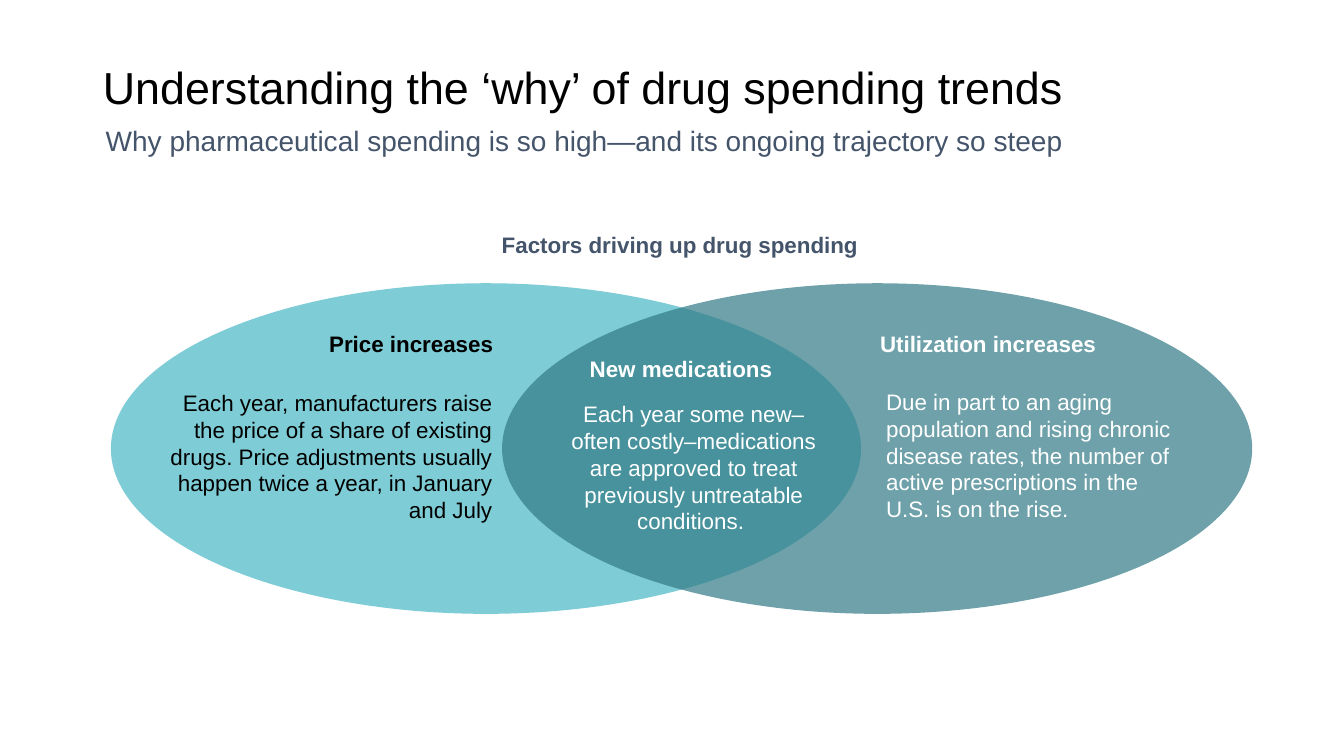
from lxml import etree
from pptx import Presentation
from pptx.dml.color import RGBColor
from pptx.enum.shapes import MSO_SHAPE
from pptx.enum.text import MSO_ANCHOR, MSO_AUTO_SIZE, PP_ALIGN
from pptx.oxml.ns import qn
from pptx.util import Inches, Pt

FONT = "Arial"
COLORS = {
    "black": "000000",
    "white": "FFFFFF",
    "slate": "44546A",
    "aqua": "48B7C4",
    "teal": "317A85",
}


def color(name):
    return RGBColor.from_string(COLORS[name])


def place(shape, left, top, width, height):
    shape.left, shape.top = Inches(left), Inches(top)
    shape.width, shape.height = Inches(width), Inches(height)


def write(paragraph, text, size, color_name, bold=False, align=PP_ALIGN.LEFT):
    paragraph.alignment = align
    run = paragraph.add_run()
    run.text = text
    run.font.name = FONT
    run.font.size = Pt(size)
    run.font.bold = bold
    run.font.color.rgb = color(color_name)


def add_title(slide, text):
    title = slide.shapes.title
    place(title, 0.92, 0.4, 11.5, 0.98)
    frame = title.text_frame
    frame.word_wrap = True
    frame.auto_size = MSO_AUTO_SIZE.NONE
    frame.vertical_anchor = MSO_ANCHOR.MIDDLE
    paragraph = frame.paragraphs[0]
    paragraph.line_spacing = 0.9
    write(paragraph, text, 32, "black")


def add_text(slide, box, text, color_name, size=16, bold=False, align=PP_ALIGN.LEFT):
    shape = slide.shapes.add_textbox(*[Inches(length) for length in box])
    frame = shape.text_frame
    frame.word_wrap = True
    frame.auto_size = MSO_AUTO_SIZE.SHAPE_TO_FIT_TEXT
    write(frame.paragraphs[0], text, size, color_name, bold, align)


def add_ellipse(group, left, color_name):
    ellipse = group.shapes.add_shape(
        MSO_SHAPE.OVAL, Inches(left), Inches(2.81), Inches(7.44), Inches(3.28))
    ellipse.shadow.inherit = False
    ellipse.line.fill.background()
    ellipse.fill.solid()
    ellipse.fill.fore_color.rgb = color(color_name)
    # 70 % opacity lets the overlap show
    fill_color = ellipse.fill._xPr.find(qn("a:solidFill")).find(qn("a:srgbClr"))
    etree.SubElement(fill_color, qn("a:alpha")).set("val", "70000")


def add_factor(slide, heading, heading_box, body, body_box, color_name, align):
    add_text(slide, body_box, body, color_name, align=align)
    add_text(slide, heading_box, heading, color_name, bold=True, align=align)


def main():
    presentation = Presentation()
    presentation.slide_width = Inches(13.33)
    presentation.slide_height = Inches(7.5)
    slide = presentation.slides.add_slide(presentation.slide_layouts[5])

    # Title and subtitle
    add_title(slide, "Understanding the ‘why’ of drug spending trends")
    add_text(slide, (0.95, 1.18, 10.9, 0.44),
             "Why pharmaceutical spending is so high—and its ongoing trajectory so steep",
             "slate", size=20)

    # Overlapping ellipses
    venn = slide.shapes.add_group_shape()
    add_ellipse(venn, 1.1, "aqua")
    add_ellipse(venn, 4.98, "teal")

    # Factors
    add_factor(slide, "Price increases", (2.63, 3.23, 2.36, 0.37),
               "Each year, manufacturers raise the price of a share of existing drugs. "
               "Price adjustments usually happen twice a year, in January and July",
               (1.41, 3.81, 3.57, 1.45), "black", PP_ALIGN.RIGHT)
    add_factor(slide, "Utilization increases", (8.63, 3.23, 2.61, 0.37),
               "Due in part to an aging population and rising chronic disease rates, "
               "the number of active prescriptions in the U.S. is on the rise.",
               (8.69, 3.8, 3.16, 1.45), "white", PP_ALIGN.LEFT)
    add_factor(slide, "New medications ", (5.48, 3.47, 2.61, 0.37),
               "Each year some new–often costly–medications are approved to treat "
               "previously untreatable conditions. ",
               (5.47, 3.92, 2.82, 1.45), "white", PP_ALIGN.CENTER)

    # Diagram heading
    add_text(slide, (3.91, 2.24, 5.73, 0.37), "Factors driving up drug spending ",
             "slate", bold=True, align=PP_ALIGN.CENTER)

    presentation.save("out.pptx")


if __name__ == "__main__":
    main()
